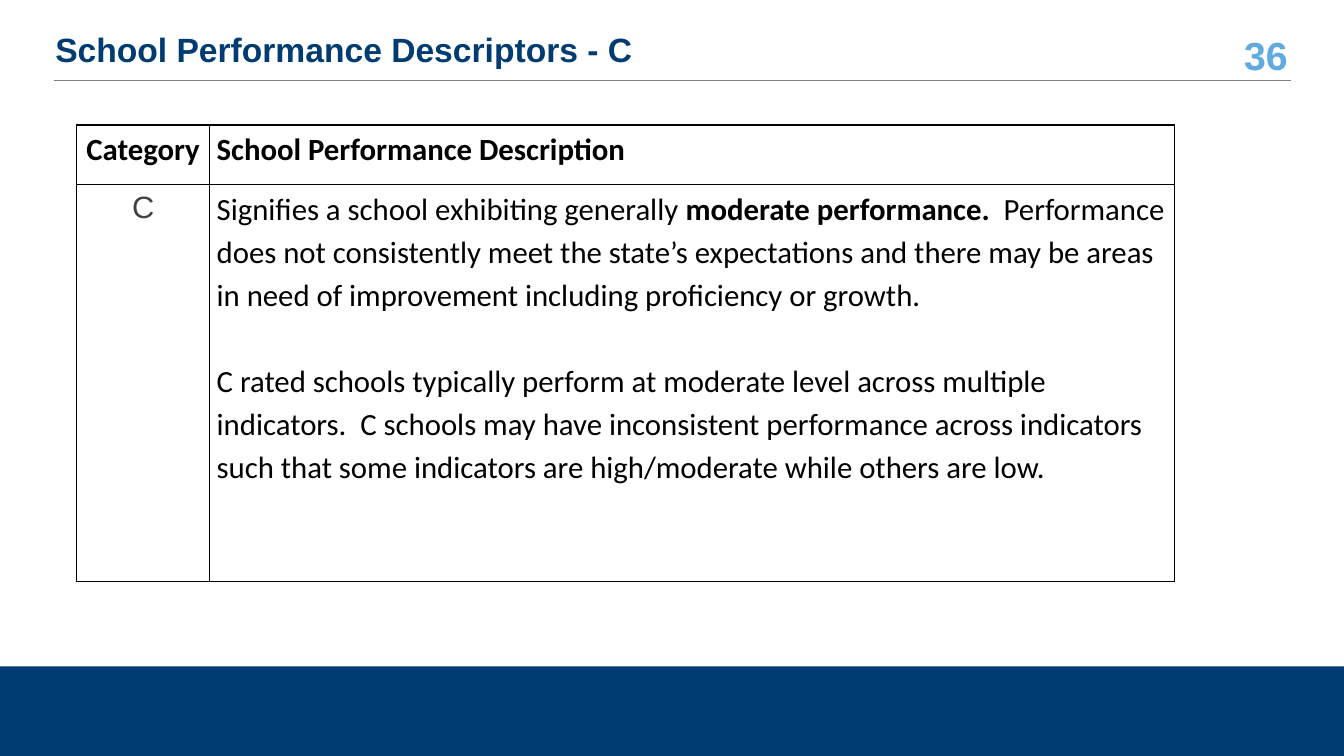
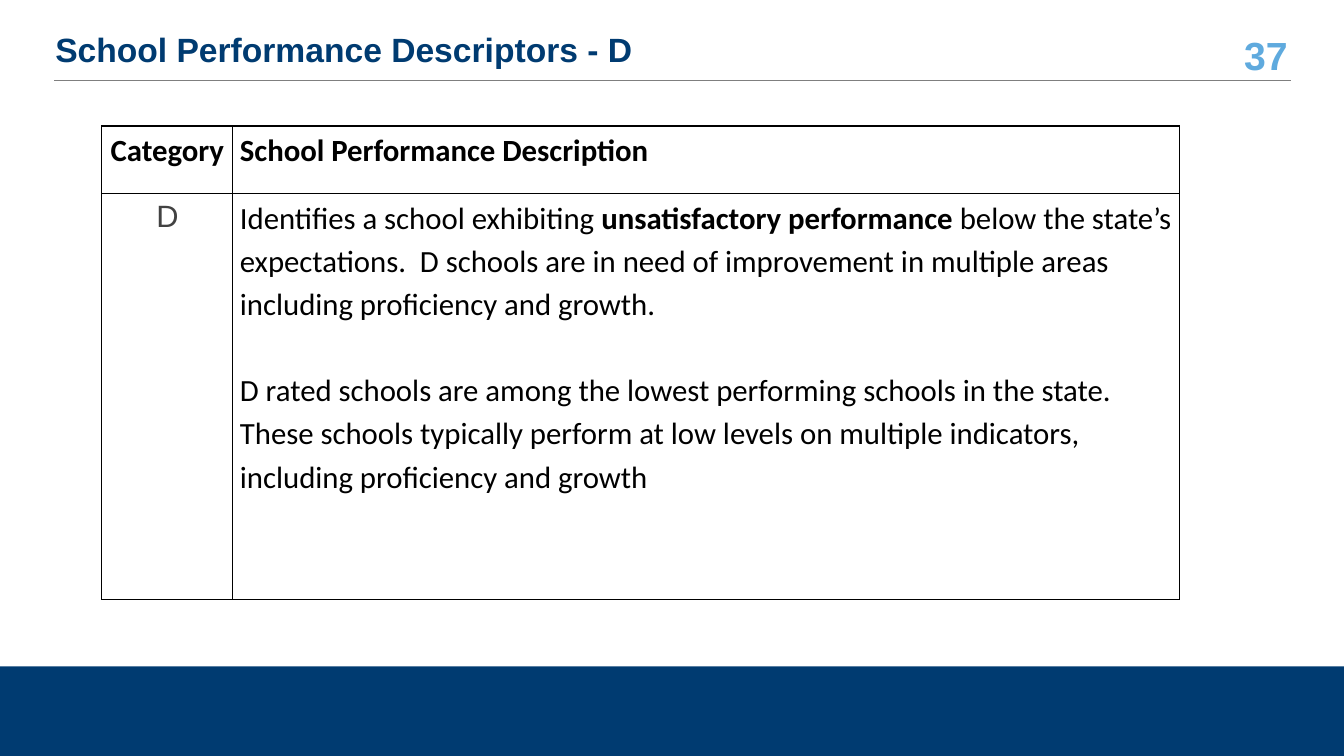
from lxml.etree import SubElement
from pptx import Presentation
from pptx.dml.color import RGBColor
from pptx.enum.shapes import MSO_CONNECTOR, MSO_SHAPE
from pptx.enum.text import MSO_ANCHOR, PP_ALIGN
from pptx.oxml import parse_xml
from pptx.oxml.ns import nsdecls, qn
from pptx.util import Pt

PX = 9144  # 100 px to the inch
NAVY, SKY, GREY, DARK, BLACK, WHITE = (
    "003B71", "5FAADE", "7F7F7F", "424242", "000000", "FFFFFF")

# Text styles
TITLE = {"name": "Arial", "size": Pt(24), "bold": True, "color": NAVY}
NUMBER = {"name": "Arial", "size": Pt(28), "bold": True, "color": SKY}
BODY = {"name": "Calibri", "size": Pt(22), "bold": False, "color": BLACK}
STRONG = {**BODY, "bold": True}
GRADE = {**BODY, "name": "Arial", "color": DARK}
INSET = {"margin_left": 7 * PX, "margin_right": 7 * PX,
         "margin_top": PX, "margin_bottom": 10 * PX}

# Slide content: grade, number, table corner, columns, rows, paragraphs
PAGES = [
    ("C", 36, (76, 124), (132, 957), (59, 394), [
        [("Signifies a school exhibiting generally ", BODY),
         ("moderate performance.  ", STRONG),
         ("Performance does not consistently meet the state’s expectations "
          "and there may be areas in need of improvement including "
          "proficiency or growth.", BODY)],
        [("C rated schools typically perform at moderate level across "
          "multiple indicators.  C schools may have inconsistent performance "
          "across indicators such that some indicators are high/moderate "
          "while others are low.", BODY)]]),
    ("D", 37, (101, 125), (130, 939), (67, 403), [
        [("Identifies a school exhibiting ", BODY),
         ("unsatisfactory performance", STRONG),
         (" below the state’s expectations.  D schools are in need of "
          "improvement in multiple areas including proficiency and growth.",
          BODY)],
        [("D rated schools are among the lowest performing schools in the "
          "state. These schools typically perform at low levels on multiple "
          "indicators, including proficiency and growth", BODY)]]),
]


def tint(code):
    return RGBColor.from_string(code)


def write(frame, paras, align, space):
    for i, runs in enumerate(paras):
        para = frame.add_paragraph() if i else frame.paragraphs[0]
        para.alignment, para.line_spacing = align, space
        if i:
            para.space_before = Pt(31)
        for text, style in runs:
            run = para.add_run()
            run.text = text
            for key, value in style.items():
                if key == "color":
                    run.font.color.rgb = tint(value)
                else:
                    setattr(run.font, key, value)


deck = Presentation()
deck.slide_width, deck.slide_height = 1333 * PX, 750 * PX

for grade, number, corner, cols, rows, story in PAGES:
    slide = deck.slides.add_slide(deck.slide_layouts[6])
    shapes = slide.shapes

    # Footer band
    band = shapes.add_shape(MSO_SHAPE.RECTANGLE, 0, 661 * PX, 1333 * PX, 89 * PX)
    band.shadow.inherit = False
    band.fill.solid()
    band.fill.fore_color.rgb = tint(NAVY)
    band.line.fill.background()

    # Rule under the title
    rule = shapes.add_connector(
        MSO_CONNECTOR.STRAIGHT, 54 * PX, 80 * PX, 1280 * PX, 80 * PX)
    rule.line.color.rgb = tint(GREY)
    rule.line.width = Pt(0.75)
    SubElement(rule.element.spPr, qn("a:effectLst"))

    # Title and slide number
    for text, style, left, top, width, align, space in (
            (f"School Performance Descriptors - {grade}", TITLE,
             45, 30, 1160, PP_ALIGN.LEFT, 0.9),
            (str(number), NUMBER, 1207, 33, 80, PP_ALIGN.RIGHT, 1.0)):
        box = shapes.add_textbox(left * PX, top * PX, width * PX, 42 * PX)
        frame = box.text_frame
        frame.word_wrap = True
        frame.vertical_anchor = MSO_ANCHOR.MIDDLE
        write(frame, [[(text, style)]], align, space)

    # Table grid
    left, top = corner
    table = shapes.add_table(2, 2, left * PX, top * PX,
                             sum(cols) * PX, sum(rows) * PX).table
    table.first_row = table.horz_banding = False
    for col, width in zip(table.columns, cols):
        col.width = width * PX
    for row, height in zip(table.rows, rows):
        row.height = height * PX

    # Cell text, fill and borders
    texts = [[[("Category", STRONG)]],
             [[("School Performance Description", STRONG)]],
             [[(grade, GRADE)]],
             story]
    aligns = [PP_ALIGN.CENTER, PP_ALIGN.LEFT] * 2
    for cell, paras, align in zip(table.iter_cells(), texts, aligns):
        write(cell.text_frame, paras, align, 1.15)
        for key, value in INSET.items():
            setattr(cell, key, value)
        cell.fill.solid()
        cell.fill.fore_color.rgb = tint(WHITE)
        props = cell._tc.get_or_add_tcPr()
        for i, side in enumerate("LRTB"):
            props.insert(i, parse_xml(
                f'<a:ln{side} {nsdecls("a")} w="{Pt(1)}"><a:solidFill>'
                f'<a:srgbClr val="{BLACK}"/></a:solidFill></a:ln{side}>'))

deck.save("out.pptx")
